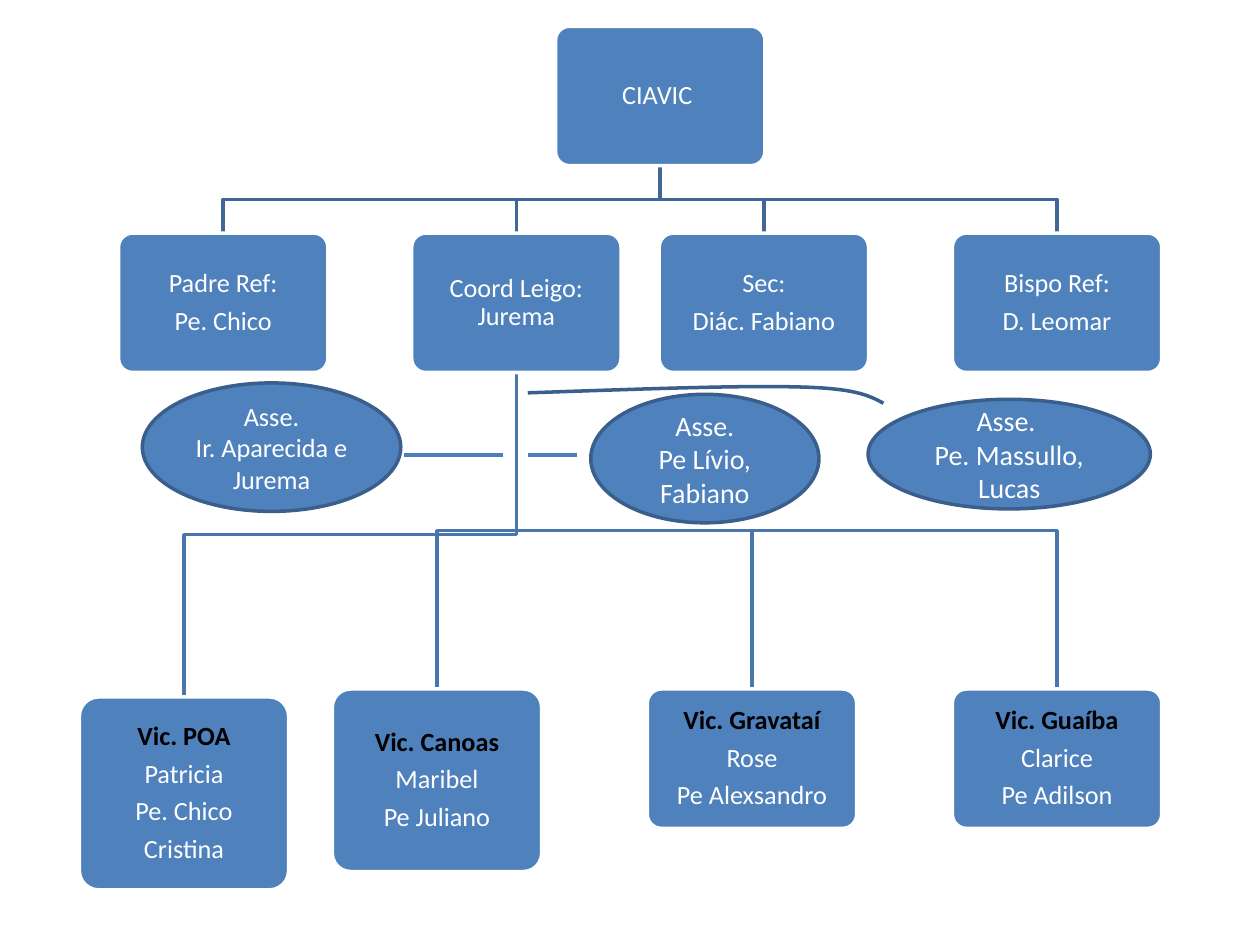
from lxml.etree import SubElement
from pptx import Presentation
from pptx.dml.color import RGBColor
from pptx.enum.shapes import MSO_CONNECTOR, MSO_SHAPE
from pptx.enum.text import MSO_ANCHOR, PP_ALIGN
from pptx.oxml.ns import qn
from pptx.util import Cm, Pt

BLUE, WHITE, BLACK = "4F81BD", "FFFFFF", "000000"
UPPER_BRANCH, LOWER_BRANCH = "3F6797", "4875AC"
ADVISOR_EDGE, ADVISOR_LINK = "3A5F8C", "4B7EBC"
BOX_WIDTH, BOX_HEIGHT = 4.22, 2.81
COUNCIL_TOP, VICARIATE_TOP = 4.7, 13.89
COORDINATOR_CENTER = 10.41

COUNCIL = [
    (4.5, ["Padre Ref:", "Pe. Chico"]),
    (COORDINATOR_CENTER, ["Coord Leigo: Jurema"]),
    (15.4, ["Sec:", "Diác. Fabiano"]),
    (21.31, ["Bispo Ref:", "D. Leomar"]),
]
VICARIATES = [
    (3.71, 14.05, 3.89, ["Vic. POA", "Patricia", "Pe. Chico", "Cristina"]),
    (8.81, VICARIATE_TOP, 3.68, ["Vic. Canoas", "Maribel", "Pe Juliano"]),
    (15.16, VICARIATE_TOP, BOX_HEIGHT, ["Vic. Gravataí", "Rose", "Pe Alexsandro"]),
    (21.31, VICARIATE_TOP, BOX_HEIGHT, ["Vic. Guaíba", "Clarice", "Pe Adilson"]),
]
ADVISORS = [
    (2.87, 7.72, 5.21, 2.59, 15, ["Asse.", "Ir. Aparecida e Jurema"]),
    (11.91, 7.95, 4.6, 2.59, 16, ["Asse.", "Pe Lívio, Fabiano"]),
    (17.5, 8.05, 5.69, 2.21, 16, ["Asse. ", "Pe. Massullo, Lucas"]),
]
CURVE = [
    [(10.64, 7.92), (12.75, 7.85), (14.83, 7.77), (16.03, 7.8)],
    [(16.03, 7.8), (17.25, 7.82), (17.53, 7.98), (17.81, 8.13)],
]


def color(value):
    return RGBColor.from_string(value)


def set_line(line, value):
    line.color.rgb = color(value)
    line.width = Pt(2)


def add_panel(slide, preset, left, top, width, height, edge):
    panel = slide.shapes.add_shape(preset, Cm(left), Cm(top), Cm(width), Cm(height))
    panel.shadow.inherit = False
    panel.fill.solid()
    panel.fill.fore_color.rgb = color(BLUE)
    set_line(panel.line, edge)
    panel.text_frame.word_wrap = True
    panel.text_frame.vertical_anchor = MSO_ANCHOR.MIDDLE
    return panel


def write_lines(frame, lines, size, heading=False):
    for index, words in enumerate(lines):
        paragraph = frame.paragraphs[0] if index == 0 else frame.add_paragraph()
        paragraph.alignment = PP_ALIGN.CENTER
        run = paragraph.add_run()
        run.text = words
        is_heading = heading and index == 0
        run.font.name = "Calibri"
        run.font.size = Pt(size)
        run.font.bold = is_heading
        run.font.color.rgb = color(BLACK if is_heading else WHITE)


def add_member_box(slide, center, top, height, lines, heading=False):
    box = add_panel(slide, MSO_SHAPE.ROUNDED_RECTANGLE, center - BOX_WIDTH / 2,
                    top, BOX_WIDTH, height, WHITE)
    box.adjustments[0] = 0.1
    frame = box.text_frame
    frame.margin_left = frame.margin_right = Cm(0.15)
    frame.margin_top = frame.margin_bottom = Cm(0.15)
    write_lines(frame, lines, 15, heading)
    for paragraph in frame.paragraphs:
        paragraph.line_spacing = 0.9
        paragraph.space_after = Pt(5.25)


def add_advisor(slide, left, top, width, height, size, lines):
    oval = add_panel(slide, MSO_SHAPE.OVAL, left, top, width, height, ADVISOR_EDGE)
    write_lines(oval.text_frame, lines, size)


def add_open_line(slide, points, edge):
    start, *rest = [(Cm(x), Cm(y)) for x, y in points]
    builder = slide.shapes.build_freeform(*start)
    builder.add_line_segments(rest, close=False)
    outline = builder.convert_to_shape()
    outline.shadow.inherit = False
    outline.fill.background()
    set_line(outline.line, edge)


def add_branch(slide, parent, parent_bottom, child, child_top, edge):
    middle = (parent_bottom + child_top) / 2
    add_open_line(slide, [(parent, parent_bottom), (parent, middle),
                          (child, middle), (child, child_top)], edge)


def add_advisor_link(slide, start, end, height):
    link = slide.shapes.add_connector(MSO_CONNECTOR.STRAIGHT, Cm(start), Cm(height),
                                      Cm(end), Cm(height))
    set_line(link.line, ADVISOR_LINK)
    SubElement(link._element.spPr, qn("a:effectLst"))


def curve_points(segments, steps=16):
    points = [segments[0][0]]
    for segment in segments:
        for step in range(1, steps + 1):
            t = step / steps
            weights = ((1 - t) ** 3, 3 * t * (1 - t) ** 2, 3 * t ** 2 * (1 - t), t ** 3)
            points.append(tuple(sum(weight * value for weight, value in zip(weights, axis))
                                for axis in zip(*segment)))
    return points


def main():
    presentation = Presentation()
    presentation.slide_width, presentation.slide_height = Cm(25.4), Cm(19.05)
    slide = presentation.slides.add_slide(presentation.slide_layouts[6])

    root_center, root_top = 13.31, 0.53
    for center, _ in COUNCIL:
        add_branch(slide, root_center, root_top + BOX_HEIGHT, center, COUNCIL_TOP,
                   UPPER_BRANCH)
    for center, top, _, _ in VICARIATES:
        add_branch(slide, COORDINATOR_CENTER, COUNCIL_TOP + BOX_HEIGHT, center, top,
                   LOWER_BRANCH)

    add_member_box(slide, root_center, root_top, BOX_HEIGHT, ["CIAVIC "])
    for center, lines in COUNCIL:
        add_member_box(slide, center, COUNCIL_TOP, BOX_HEIGHT, lines)
    for center, top, height, lines in VICARIATES:
        add_member_box(slide, center, top, height, lines, heading=True)

    for advisor in ADVISORS:
        add_advisor(slide, *advisor)
    for start, end in [(8.15, 10.13), (10.64, 11.63)]:
        add_advisor_link(slide, start, end, 9.17)
    add_open_line(slide, curve_points(CURVE), ADVISOR_EDGE)

    presentation.save("out.pptx")


if __name__ == "__main__":
    main()
